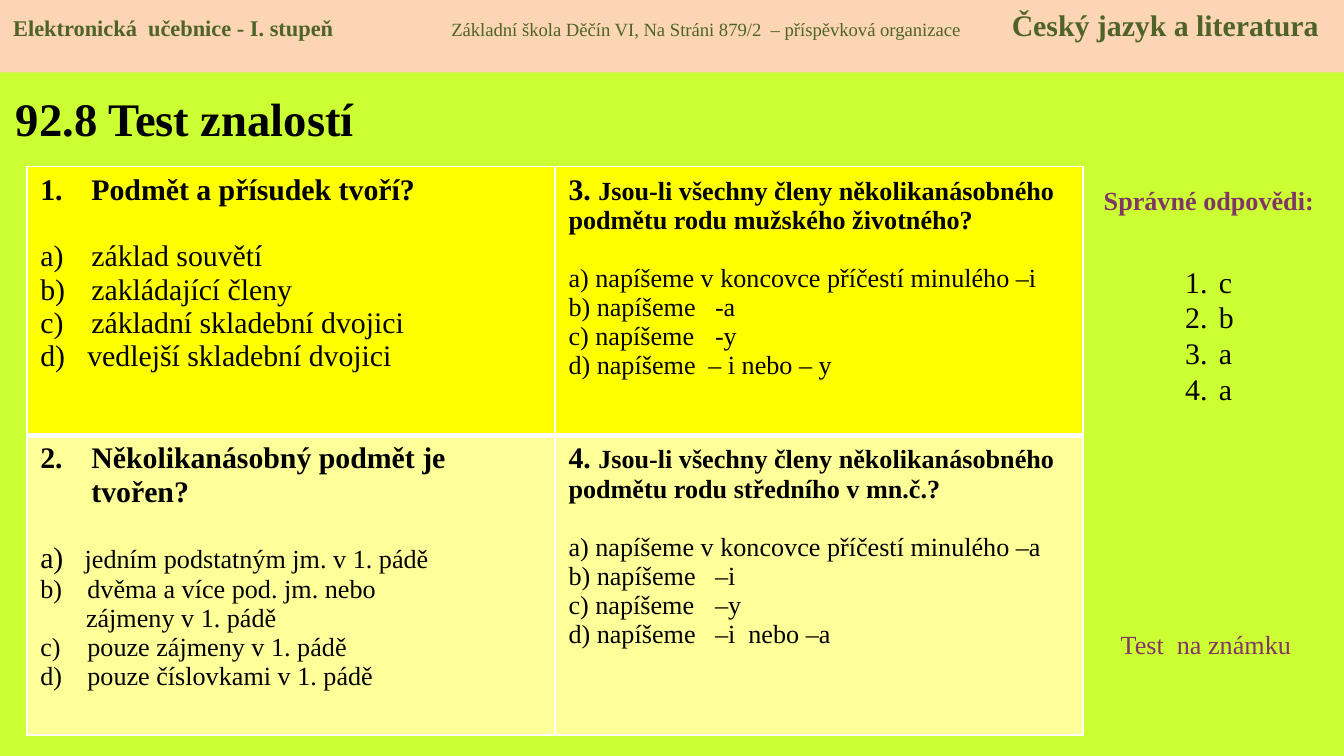
from pptx import Presentation
from pptx.util import Inches, Pt
from pptx.dml.color import RGBColor as RGB
from pptx.enum.shapes import MSO_SHAPE as Shape
from pptx.enum.text import MSO_ANCHOR as Anchor, PP_ALIGN as Align
from pptx.oxml.ns import qn
from lxml.etree import SubElement as Sub

FONT = "Times New Roman"
BLACK = RGB(0, 0, 0)
WHITE = RGB(255, 255, 255)
LIME = RGB(0xCC, 0xFF, 0x33)
PEACH = RGB(0xFC, 0xD5, 0xB5)
OLIVE = RGB(0x4F, 0x62, 0x28)
PLUM = RGB(0x81, 0x37, 0x63)
FILLS = [RGB(0xFF, 0xFF, 0), RGB(0xFF, 0xFF, 0x99)]

HEAD = [
    ("Elektronická  učebnice - I. stupeň\t", 12, True),
    ("Základní škola Děčín VI, Na Stráni 879/2  – příspěvková organizace\t", 10, False),
    ("Český jazyk a literatura", 16, True),
]
ASK = dict(size=16, bold=True, hang=0.38, num="arabicPeriod", after=18)
ITEM = dict(size=16, hang=0.38, num="alphaLcParenR")
LINE = dict(size=14, hang=0.35)
SIDE = dict(size=14, tabs=[1.09])
WRAP = dict(size=14, bold=True, after=15.5)

CELLS = [
    [
        [
            ("Podmět a přísudek tvoří?", ASK),
            ("základ souvětí", ITEM),
            ("zakládající členy", dict(ITEM, start=2)),
            ("základní skladební dvojici", dict(ITEM, start=3)),
            ("d)\tvedlejší skladební dvojici", dict(size=16, hang=0.35)),
        ],
        [
            ([("3. ", 16, True), ("Jsou-li všechny členy několikanásobného", 14, True)], {}),
            ("podmětu rodu mužského životného?", WRAP),
            ("a) napíšeme v koncovce příčestí minulého –i", SIDE),
            ("b) napíšeme\t-a", SIDE),
            ("c) napíšeme\t-y", SIDE),
            ("d) napíšeme\t– i nebo – y", dict(SIDE, tabs=[1.04])),
        ],
    ],
    [
        [
            ("Několikanásobný podmět je tvořen?", dict(ASK, start=2)),
            ([("a)\t", 16, False), ("jedním podstatným jm. v 1. pádě", 14, False)], dict(hang=0.33)),
            ("b)\tdvěma a více pod. jm. nebo", LINE),
            ("zájmeny v 1. pádě", dict(size=14, left=0.34)),
            ("c)\tpouze zájmeny v 1. pádě", LINE),
            ("d)\tpouze číslovkami v 1. pádě", LINE),
        ],
        [
            ([("4. ", 16, True),
              ("Jsou-li všechny členy několikanásobného podmětu rodu středního v mn.č.?", 14, True)],
             dict(after=15.5)),
            ("a) napíšeme v koncovce příčestí minulého –a", SIDE),
            ("b) napíšeme\t–i", SIDE),
            ("c) napíšeme\t–y", SIDE),
            ("d) napíšeme\t–i  nebo –a", SIDE),
        ],
    ],
]
ROWS = [2, 2.23]
KEYS = ["c", "b", "a", "a"]


def put(frame, text, size=14, bold=False, color=BLACK, align=Align.LEFT,
        hang=0, left=0, num=None, start=1, after=0, tabs=()):
    para = frame.paragraphs[0]
    if para.runs:
        para = frame.add_paragraph()
    para.alignment = align
    para.space_after = Pt(after)
    props = para._p.get_or_add_pPr()
    if hang or left:
        props.set("marL", str(Inches(hang or left)))
        props.set("indent", str(-Inches(hang)))
    if num:
        Sub(props, qn("a:buFont"), typeface="+mj-lt")
        Sub(props, qn("a:buAutoNum"), type=num, startAt=str(start))
    if tabs:
        stops = Sub(props, qn("a:tabLst"))
        for tab in tabs:
            Sub(stops, qn("a:tab"), pos=str(Inches(tab)), algn="l")
    runs = [(text, size, bold)] if isinstance(text, str) else text
    for words, pts, heavy in runs:
        run = para.add_run()
        run.text = words
        font = run.font
        font.name, font.size, font.bold = FONT, Pt(pts), heavy
        font.color.rgb = color


def box(slide, *place):
    frame = slide.shapes.add_textbox(*map(Inches, place)).text_frame
    frame.word_wrap = True
    return frame


def edge(cell, widths):
    props = cell._tc.get_or_add_tcPr()
    for spot, (side, width) in enumerate(zip("LRTB", widths)):
        line = Sub(props, qn("a:ln" + side), w=str(Pt(width)))
        fill = Sub(line, qn("a:solidFill"))
        Sub(fill, qn("a:srgbClr"), val=str(WHITE))
        props.insert(spot, line)


def grid(slide):
    table = slide.shapes.add_table(
        2, 2, Inches(0.2), Inches(1.24), Inches(7.86), Inches(sum(ROWS))).table
    table.first_row = table.horz_banding = False
    for r, row in enumerate(CELLS):
        table.rows[r].height = Inches(ROWS[r])
        for c, lines in enumerate(row):
            cell = table.cell(r, c)
            cell.fill.solid()
            cell.fill.fore_color.rgb = FILLS[r]
            edge(cell, (1, 1, 1, 3) if r == 0 else (1, 1, 3, 1))
            for text, style in lines:
                put(cell.text_frame, text, **style)


def main():
    deck = Presentation()
    deck.slide_width = Inches(10)
    deck.slide_height = deck.slide_width * 9 // 16
    slide = deck.slides.add_slide(deck.slide_layouts[6])
    back = slide.background.fill
    back.solid()
    back.fore_color.rgb = LIME

    title = box(slide, 0.02, 0.55, 3.19, 0.65)
    title.vertical_anchor = Anchor.MIDDLE
    put(title, "92.8 Test znalostí", size=25, bold=True)
    put(box(slide, 8.05, 1.32, 1.89, 0.34), "Správné odpovědi:",
        bold=True, color=PLUM, align=Align.CENTER)
    grid(slide)
    keys = box(slide, 8.72, 1.91, 0.55, 1.73)
    for key in KEYS:
        put(keys, key, size=16, hang=0.25, num="arabicPeriod")
    put(box(slide, 8.24, 4.63, 1.57, 0.34), "Test  na známku", color=PLUM)

    band = slide.shapes.add_shape(Shape.RECTANGLE, 0, 0, Inches(10), Inches(0.54))
    band.shadow.inherit = False
    band.fill.solid()
    band.fill.fore_color.rgb = PEACH
    band.line.fill.background()
    band.text_frame.vertical_anchor = Anchor.TOP
    put(band.text_frame, HEAD, color=OLIVE, tabs=[3.26, 7.43])
    deck.save("out.pptx")


if __name__ == "__main__":
    main()
